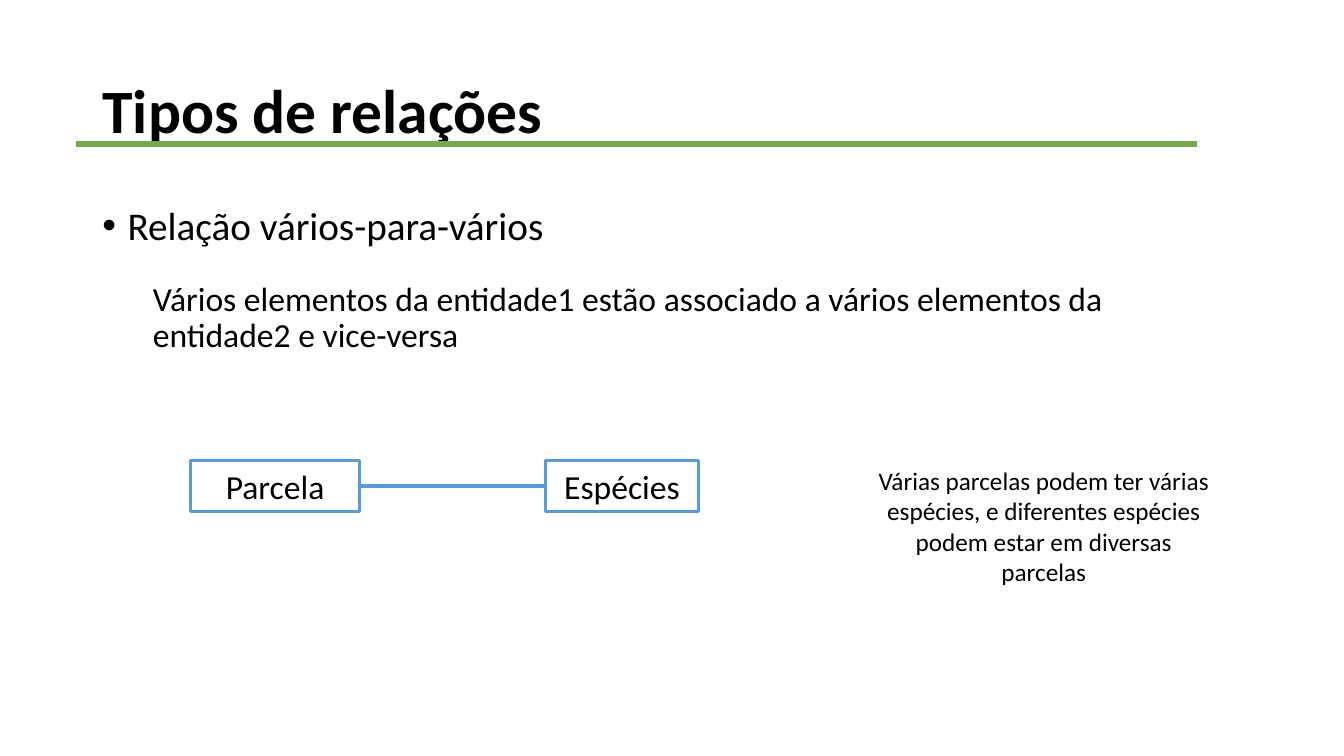
from dataclasses import dataclass

from lxml.etree import SubElement as Sub
from pptx import Presentation
from pptx.dml.color import RGBColor as Color
from pptx.enum.shapes import MSO_CONNECTOR as Link, MSO_SHAPE as Form
from pptx.enum.text import MSO_ANCHOR as Anchor, MSO_AUTO_SIZE as Fit, PP_ALIGN as Align
from pptx.oxml.ns import qn
from pptx.util import Pt


@dataclass(frozen=True)
class Theme:
    font: str = "Calibri"
    ink: Color = Color(0, 0, 0)
    paper: Color = Color(255, 255, 255)
    blue: Color = Color(0x5B, 0x9B, 0xD5)
    green: Color = Color(0x70, 0xAD, 0x47)
    title: int = 44
    head: int = 28
    text: int = 24
    note: int = 18
    edge: float = 2.25
    rule: float = 4.5


THEME = Theme()


def write(para, words, size, align=Align.LEFT, bold=False):
    para.alignment = align
    run = para.add_run()
    run.text = words
    font = run.font
    font.name, font.size, font.bold = THEME.font, Pt(size), bold
    font.color.rgb = THEME.ink


def place(shape, box):
    shape.left, shape.top, shape.width, shape.height = map(Pt, box)


def indent(para, left, hang, mark=None):
    props = para._p.get_or_add_pPr()
    props.set("marL", str(Pt(left)))
    props.set("indent", str(Pt(hang)))
    if mark:
        Sub(props, qn("a:buFont"), typeface="Arial")
        Sub(props, qn("a:buChar"), char=mark)
    else:
        Sub(props, qn("a:buNone"))


def add_line(slide, start, end, color, width):
    line = slide.shapes.add_connector(Link.STRAIGHT, *map(Pt, start + end))
    line.line.color.rgb = color
    line.line.width = Pt(width)
    Sub(line._element.spPr, qn("a:effectLst"))
    return line


def add_title(slide, box, words):
    title = slide.shapes.title
    place(title, box)
    frame = title.text_frame
    frame.auto_size = Fit.NONE
    frame.vertical_anchor = Anchor.MIDDLE
    para = frame.paragraphs[0]
    para.line_spacing = 0.9
    write(para, words, THEME.title, bold=True)
    left, top = box[0] - 11.5, box[1] + 74.2
    add_line(slide, (left, top), (left + 800.6, top), THEME.green, THEME.rule)


def add_body(slide, box, head, detail):
    body = slide.placeholders[1]
    place(body, box)
    frame = body.text_frame
    frame.auto_size = Fit.NONE
    first, second = frame.paragraphs[0], frame.add_paragraph()
    second.level = 1
    for para, gap in ((first, 10), (second, 23.6)):
        para.line_spacing = 0.9
        para.space_before = Pt(gap)
    write(first, head, THEME.head)
    write(second, detail, THEME.text)
    indent(first, 18, -18, "•")
    indent(second, 36, 0)


def add_node(slide, box, name):
    node = slide.shapes.add_shape(Form.RECTANGLE, *map(Pt, box))
    node.shadow.inherit = False
    node.fill.solid()
    node.fill.fore_color.rgb = THEME.paper
    node.line.color.rgb = THEME.blue
    node.line.width = Pt(THEME.edge)
    frame = node.text_frame
    frame.vertical_anchor = Anchor.TOP
    frame.word_wrap = True
    write(frame.paragraphs[0], name, THEME.text, Align.CENTER)
    return node


def add_pair(slide, box, names):
    left, top, width, height = box
    one, two = 121, 109.4
    right = left + width - two
    start = add_node(slide, (left, top, one, height), names[0])
    end = add_node(slide, (right, top, two, height), names[1])
    mid = top + height / 2
    line = add_line(slide, (left + one, mid), (right, mid), THEME.blue, THEME.edge)
    line.begin_connect(start, 3)
    line.end_connect(end, 1)


def add_note(slide, box, words):
    note = slide.shapes.add_textbox(*map(Pt, box))
    note.text_frame.word_wrap = True
    write(note.text_frame.paragraphs[0], words, THEME.note, Align.CENTER)


def main():
    deck = Presentation()
    deck.slide_width, deck.slide_height = Pt(960), Pt(540)
    slide = deck.slides.add_slide(deck.slide_layouts[1])
    add_title(slide, (66, 28.8, 828, 104.4), "Tipos de relações")
    add_body(slide, (66, 144, 828, 342.7), "Relação vários-para-vários",
             "Vários elementos da entidade1 estão associado a vários "
             "elementos da entidade2 e vice-versa")
    add_pair(slide, (136, 329, 363, 36.4), ("Parcela", "Espécies"))
    add_note(slide, (619.2, 329, 252.7, 94.3),
             "Várias parcelas podem ter várias espécies, e diferentes "
             "espécies podem estar em diversas parcelas")
    deck.save("out.pptx")


if __name__ == "__main__":
    main()
